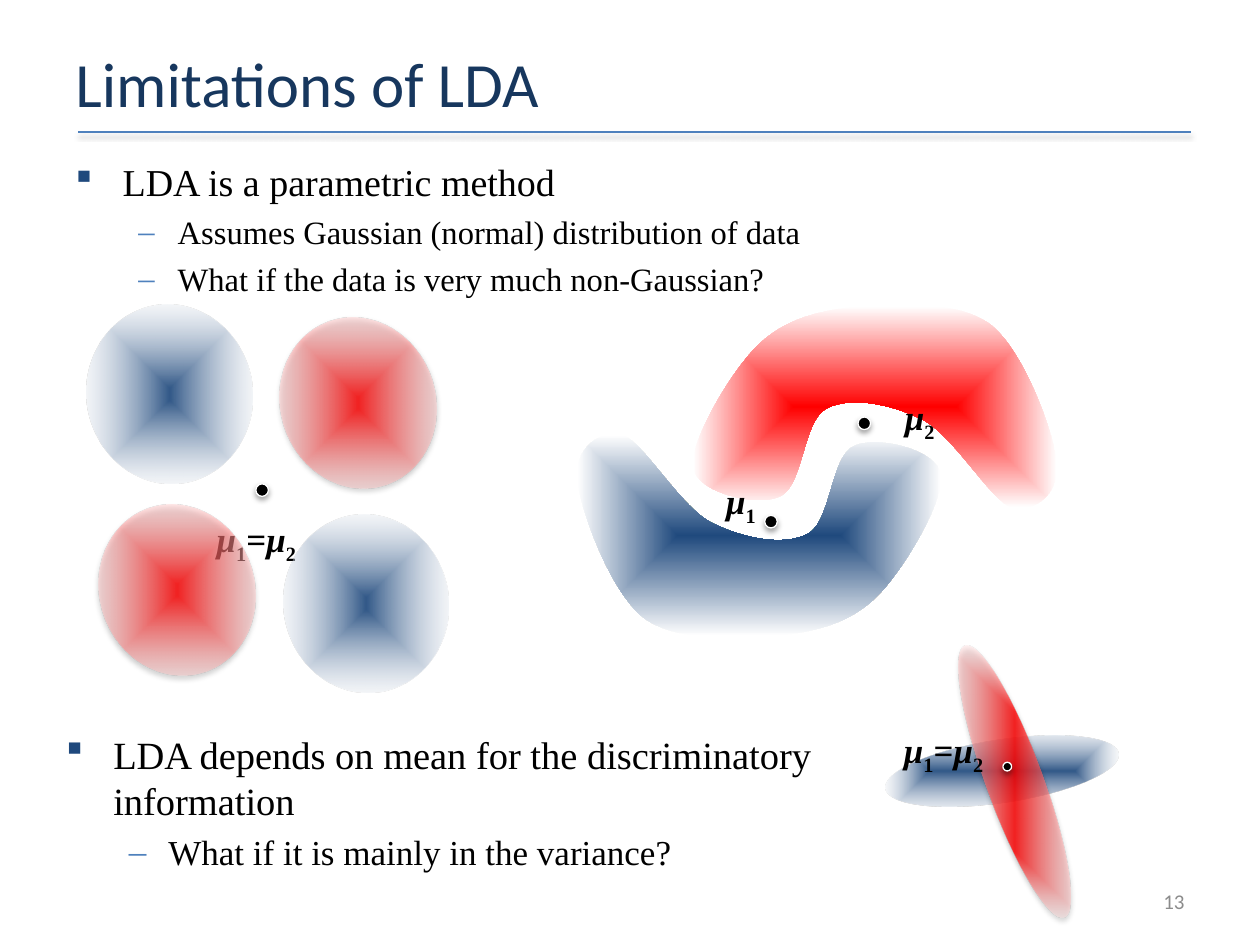
from lxml.etree import SubElement
from pptx import Presentation
from pptx.dml.color import RGBColor
from pptx.enum.shapes import MSO_CONNECTOR, MSO_SHAPE
from pptx.enum.text import MSO_ANCHOR, PP_ALIGN
from pptx.oxml.ns import qn
from pptx.util import Pt

SERIF, SANS = "Times New Roman", "Calibri"
NAVY, BLUE, RED = "1F497D", "4F81BD", "FF0000"
BLACK, WHITE = "000000", "FFFFFF"

START = (0, 93.5)
BEND = [
    [(-2, 79), (22, 38), (38, 23)],
    [(54, 8), (73, 4), (95, 1.5)],
    [(117, 0), (151, -2), (170, 12)],
    [(189, 27), (206, 73), (208, 91)],
    [(210, 108), (195, 120), (182, 116.5)],
    [(170, 112), (150, 77), (132.5, 67)],
    [(114.5, 57.5), (90, 52.5), (76, 60)],
    [(63, 67), (63, 104), (50, 110)],
    [(37, 116.5), (2, 108), START],
]


def color(code):
    return RGBColor.from_string(code)


def add(node, tag, **attrs):
    return SubElement(node, qn(tag), {k: str(v) for k, v in attrs.items()})


def tint(node, code, alpha):
    clr = add(node, "a:srgbClr", val=code)
    if alpha < 100:
        add(clr, "a:alpha", val=alpha * 1000)


class Deck:
    levels = [("§", "Wingdings", NAVY, 27, -27), ("–", SERIF, BLUE, 58.5, -22.5)]

    def __init__(self):
        self.prs = Presentation()
        self.prs.slide_width, self.prs.slide_height = Pt(720), Pt(540)
        self.slide = self.prs.slides.add_slide(self.prs.slide_layouts[6])
        self.shapes = self.slide.shapes

    def shade(self, spot, alpha=35, dist=1.8):
        props = spot._element.spPr
        group = props.find(qn("a:effectLst"))
        if group is None:
            group = add(props, "a:effectLst")
        cast = add(group, "a:outerShdw", blurRad=Pt(3.1), dist=Pt(dist),
                   dir=5400000, rotWithShape=0)
        tint(cast, BLACK, alpha)

    def fade(self, shape, code, inner, outer):
        shape.shadow.inherit = False
        shape.line.fill.background()
        shape.fill.background()
        props = shape._element.spPr
        grad = add(props, "a:gradFill", rotWithShape=1)
        stops = add(grad, "a:gsLst")
        tint(add(stops, "a:gs", pos=0), code, inner)
        tint(add(stops, "a:gs", pos=100000), WHITE, outer)
        way = add(grad, "a:path", path="shape")
        add(way, "a:fillToRect", l=50000, t=50000, r=50000, b=50000)
        props.replace(props.find(qn("a:noFill")), grad)

    def oval(self, x, y, w, h):
        shape = self.shapes.add_shape(MSO_SHAPE.OVAL, Pt(x), Pt(y), Pt(w), Pt(h))
        shape.shadow.inherit = False
        return shape

    def cloud(self, x, y, w, h, code):
        shape = self.oval(x, y, w, h)
        self.fade(shape, code, 81 if code == RED else 91, 34)
        if code == RED:
            shape.rotation = 70.1
            self.shade(shape)
        else:
            shape.rotation = 351.5

    def dot(self, x, y, size=7.2):
        shape = self.oval(x, y, size, size)
        shape.fill.solid()
        shape.fill.fore_color.rgb = color(BLACK)
        shape.line.color.rgb = color(WHITE)
        shape.line.width = Pt(0.75)
        self.shade(shape)

    def bend(self, x, y, code, turn=0):
        ends = [knots[-1] for knots in BEND]
        top = min(b for a, b in ends)
        form = self.shapes.build_freeform(Pt(START[0]), Pt(START[1]))
        form.add_line_segments([(Pt(a), Pt(b)) for a, b in ends], close=True)
        shape = form.convert_to_shape(Pt(x), Pt(y))
        lines = list(shape._element.iter(qn("a:lnTo")))
        for line, knots in zip(lines, BEND):
            arc = add(line.getparent(), "a:cubicBezTo")
            for a, b in knots:
                add(arc, "a:pt", x=Pt(a), y=Pt(b - top))
            line.getparent().replace(line, arc)
        self.fade(shape, code, 100, 100)
        shape.rotation = turn

    def rule(self, x, y, end):
        line = self.shapes.add_connector(
            MSO_CONNECTOR.STRAIGHT, Pt(x), Pt(y), Pt(end), Pt(y))
        line.line.color.rgb = color(BLUE)
        line.line.width = Pt(1)
        self.shade(line, 38, 1.6)

    def box(self, x, y, w, h, anchor=MSO_ANCHOR.TOP):
        frame = self.shapes.add_textbox(Pt(x), Pt(y), Pt(w), Pt(h)).text_frame
        frame.word_wrap = True
        frame.vertical_anchor = anchor
        return frame

    def run(self, para, text, size, face=SERIF, code=BLACK):
        run = para.add_run()
        run.text = text
        font = run.font
        font.size, font.name = Pt(size), face
        font.color.rgb = color(code)
        return run

    def line(self, x, y, w, h, text, size, code, align=PP_ALIGN.LEFT):
        para = self.box(x, y, w, h, MSO_ANCHOR.MIDDLE).paragraphs[0]
        para.alignment = align
        self.run(para, text, size, SANS, code)

    def label(self, x, y, w, text):
        para = self.box(x, y, w, 31.5).paragraphs[0]
        para.alignment = PP_ALIGN.CENTER
        for char in text:
            run = self.run(para, char, 20)
            run.font.bold = True
            run.font.italic = char == "μ"
            if char.isdigit():
                run._r.get_or_add_rPr().set("baseline", "-25000")

    def list(self, x, y, w, h, items):
        frame = self.box(x, y, w, h)
        for i, (level, text, size) in enumerate(items):
            para = frame.add_paragraph() if i else frame.paragraphs[0]
            mark, face, code, left, hang = self.levels[level]
            para.level = level
            props = para._p.get_or_add_pPr()
            props.set("marL", str(Pt(left)))
            props.set("indent", str(Pt(hang)))
            add(add(props, "a:buClr"), "a:srgbClr", val=code)
            add(props, "a:buFont", typeface=face)
            add(props, "a:buChar", char=mark)
            para.space_before = Pt(4.5 if i else 0)
            self.run(para, text, size)


def main():
    deck = Deck()
    deck.rule(44.6, 75.6, 680.4)
    deck.line(36, 21.6, 648, 51, "Limitations of LDA", 36, "17375E")
    deck.list(36, 87, 648, 77, [
        (0, "LDA is a parametric method", 21.7),
        (1, "Assumes Gaussian (normal) distribution of data", 18.6),
        (1, "What if the data is very much non-Gaussian?", 18.6),
    ])
    deck.line(516, 500.4, 168, 28.8, "13", 12, "8C8C8C", PP_ALIGN.RIGHT)

    deck.cloud(49.7, 174.2, 94.3, 102.2, NAVY)
    deck.cloud(155.5, 185.8, 98.6, 88.6, RED)
    deck.label(108, 292.3, 77, "μ1=μ2")
    deck.dot(146.2, 276.5)
    deck.cloud(51.8, 293, 98.6, 88.6, RED)
    deck.cloud(162, 293.8, 94.3, 102.2, NAVY)

    deck.bend(396, 173.5, RED)
    deck.bend(329.8, 247, NAVY, 180)
    deck.dot(490.3, 238.3)
    deck.dot(437, 294.5)
    deck.label(404, 270.7, 39, "μ1")
    deck.label(505.4, 222.5, 40.3, "μ2")

    deck.cloud(505.4, 422.6, 134.6, 36, NAVY)
    deck.cloud(497.5, 430.6, 164.9, 32.4, RED)
    deck.label(505.4, 412.6, 67.7, "μ1=μ2")
    deck.dot(573.1, 435.6, 5)

    deck.list(30.6, 414, 467.3, 88.6, [
        (0, "LDA depends on mean for the discriminatory information", 22),
        (1, "What if it is mainly in the variance?", 20),
    ])
    deck.prs.save("out.pptx")


if __name__ == "__main__":
    main()
